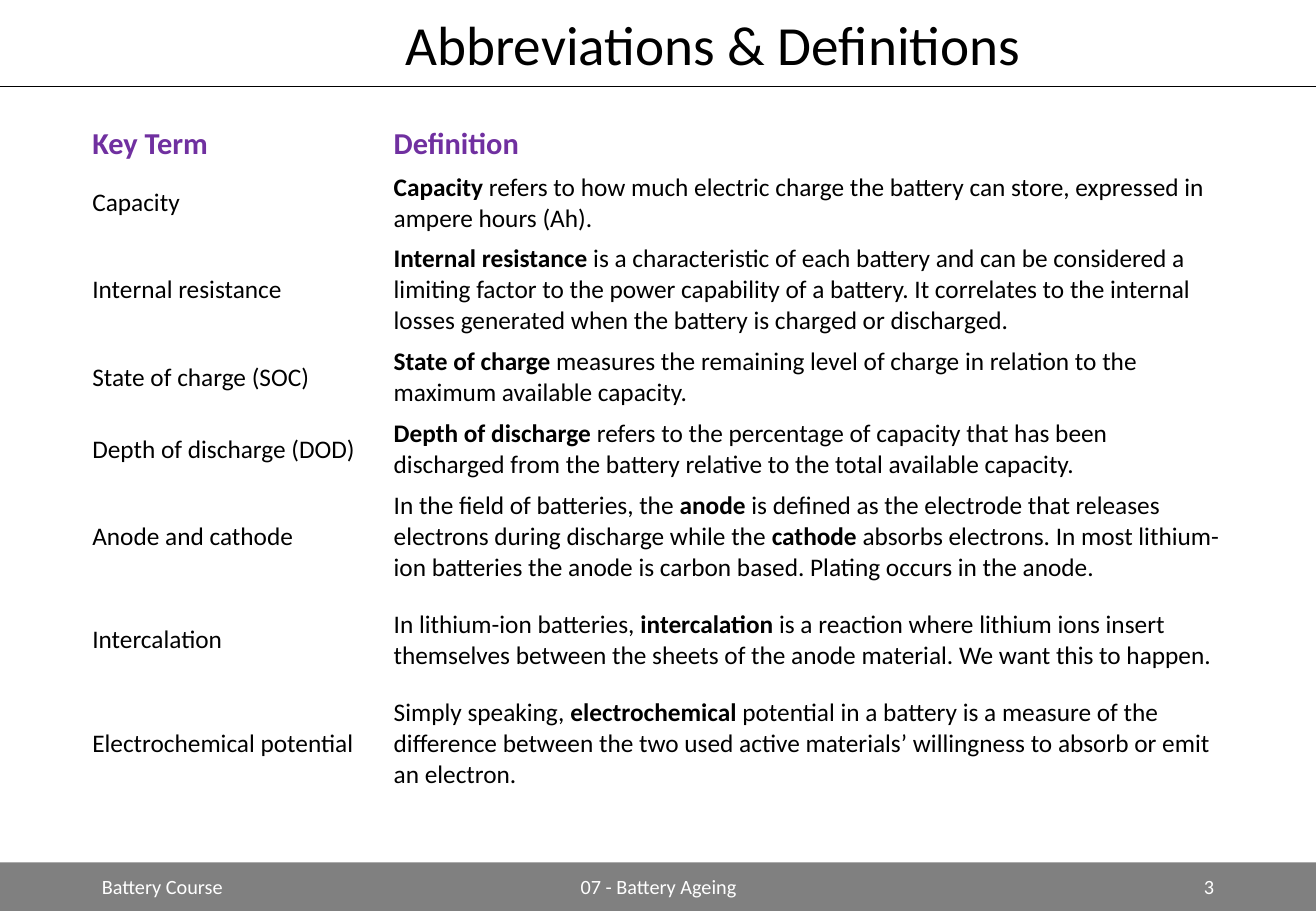
from typing import NamedTuple

from pptx import Presentation
from pptx.dml.color import RGBColor
from pptx.enum.shapes import MSO_CONNECTOR, MSO_SHAPE
from pptx.enum.text import MSO_ANCHOR, PP_ALIGN
from pptx.oxml.ns import qn
from pptx.util import Inches, Pt
from lxml.etree import SubElement

FONT = "Calibri"
COLORS = {"black": "000000", "white": "FFFFFF", "grey": "808080", "purple": "7030A0"}
WIDTH, HEIGHT = 10.83, 7.5
BAR_TOP, BAR_HIGH, RULE_TOP = 7.1, 0.4, 0.71


class Label(NamedTuple):
    text: str
    left: float
    top: float
    width: float
    height: float
    align: PP_ALIGN
    size: float
    color: str


class Term(NamedTuple):
    name: str
    meaning: str  # bold words stand between asterisks
    height: float


LABELS = [
    Label("Abbreviations & Definitions", 1.66, 0, 8.42, RULE_TOP,
          PP_ALIGN.CENTER, 32.7, "black"),
    Label("Battery Course", 0.74, BAR_TOP, 2.44, BAR_HIGH, PP_ALIGN.LEFT, 12, "white"),
    Label("07 - Battery Ageing", 3.59, BAR_TOP, 3.66, BAR_HIGH,
          PP_ALIGN.CENTER, 12, "white"),
    Label("3", 7.65, BAR_TOP, 2.44, BAR_HIGH, PP_ALIGN.RIGHT, 12, "white"),
]

TERMS = [
    Term("*Key Term*", "*Definition*", 0.34),
    Term("Capacity",
         "*Capacity* refers to how much electric charge the battery can store, "
         "expressed in ampere hours (Ah).", 0.59),
    Term("Internal resistance",
         "*Internal resistance* is a characteristic of each battery and can be "
         "considered a limiting factor to the power capability of a battery. It "
         "correlates to the internal losses generated when the battery is charged "
         "or discharged.", 0.85),
    Term("State of charge (SOC)",
         "*State of charge* measures the remaining level of charge in relation to "
         "the maximum available capacity.", 0.59),
    Term("Depth of discharge (DOD)",
         "*Depth of discharge* refers to the percentage of capacity that has been "
         "discharged from the battery relative to the total available capacity.", 0.59),
    Term("Anode and cathode",
         "In the field of batteries, the *anode* is defined as the electrode that "
         "releases electrons during discharge while the *cathode* absorbs electrons. "
         "In most lithium-ion batteries the anode is carbon based. Plating occurs in "
         "the anode.", 0.85),
    Term("Intercalation",
         "In lithium-ion batteries, *intercalation* is a reaction where lithium ions "
         "insert themselves between the sheets of the anode material. We want this "
         "to happen.", 0.85),
    Term("Electrochemical potential",
         "Simply speaking, *electrochemical* potential in a battery is a measure of "
         "the difference between the two used active materials’ willingness to absorb "
         "or emit an electron.", 0.85),
]
COLUMNS = [2.48, 6.99]


def rgb(name: str) -> RGBColor:
    return RGBColor.from_string(COLORS[name])


def style(font, size: float, color: str, bold: bool = False) -> None:
    font.name, font.size, font.bold = FONT, Pt(size), bold
    font.color.rgb = rgb(color)


def add_label(slide, label: Label) -> None:
    box = slide.shapes.add_textbox(Inches(label.left), Inches(label.top),
                                   Inches(label.width), Inches(label.height))
    frame = box.text_frame
    frame.word_wrap = True
    frame.vertical_anchor = MSO_ANCHOR.MIDDLE
    frame.text = label.text
    line = frame.paragraphs[0]
    line.alignment = label.align
    style(line.runs[0].font, label.size, label.color)


def add_frame(slide) -> None:
    bar = slide.shapes.add_shape(MSO_SHAPE.RECTANGLE, 0, Inches(BAR_TOP),
                                 Inches(WIDTH), Inches(BAR_HIGH))
    bar.shadow.inherit = False
    bar.fill.solid()
    bar.fill.fore_color.rgb = rgb("grey")
    bar.line.fill.background()
    rule = slide.shapes.add_connector(MSO_CONNECTOR.STRAIGHT, 0, Inches(RULE_TOP),
                                      Inches(WIDTH), Inches(RULE_TOP))
    rule.line.color.rgb = rgb("black")
    rule.line.width = Pt(0.5)
    SubElement(rule._element.spPr, qn("a:effectLst"))


def fill_cell(cell, text: str, size: float, color: str) -> None:
    cell.fill.solid()
    cell.fill.fore_color.rgb = rgb("white")
    cell.vertical_anchor = MSO_ANCHOR.MIDDLE
    cell.margin_left = cell.margin_right = Inches(0.08)
    cell.margin_top = cell.margin_bottom = Inches(0.04)
    line = cell.text_frame.paragraphs[0]
    for i, part in enumerate(text.split("*")):
        if part:
            run = line.add_run()
            run.text = part
            style(run.font, size, color, bold=i % 2 == 1)


def add_terms(slide, terms: list[Term]) -> None:
    high = sum(term.height for term in terms)
    table = slide.shapes.add_table(len(terms), len(COLUMNS), Inches(0.68), Inches(0.99),
                                   Inches(sum(COLUMNS)), Inches(high)).table
    table.first_row = table.horz_banding = False
    for column, width in zip(table.columns, COLUMNS):
        column.width = Inches(width)
    for i, (row, term) in enumerate(zip(table.rows, terms)):
        row.height = Inches(term.height)
        size, color = (15, "black") if i else (18, "purple")
        for cell, text in zip(row.cells, (term.name, term.meaning)):
            fill_cell(cell, text, size, color)


def main() -> None:
    deck = Presentation()
    deck.slide_width, deck.slide_height = Inches(WIDTH), Inches(HEIGHT)
    slide = deck.slides.add_slide(deck.slide_layouts[6])

    # Footer bar and title rule
    add_frame(slide)

    # Key terms
    add_terms(slide, TERMS)

    # Title and footer text
    for label in LABELS:
        add_label(slide, label)

    deck.save("out.pptx")


if __name__ == "__main__":
    main()
